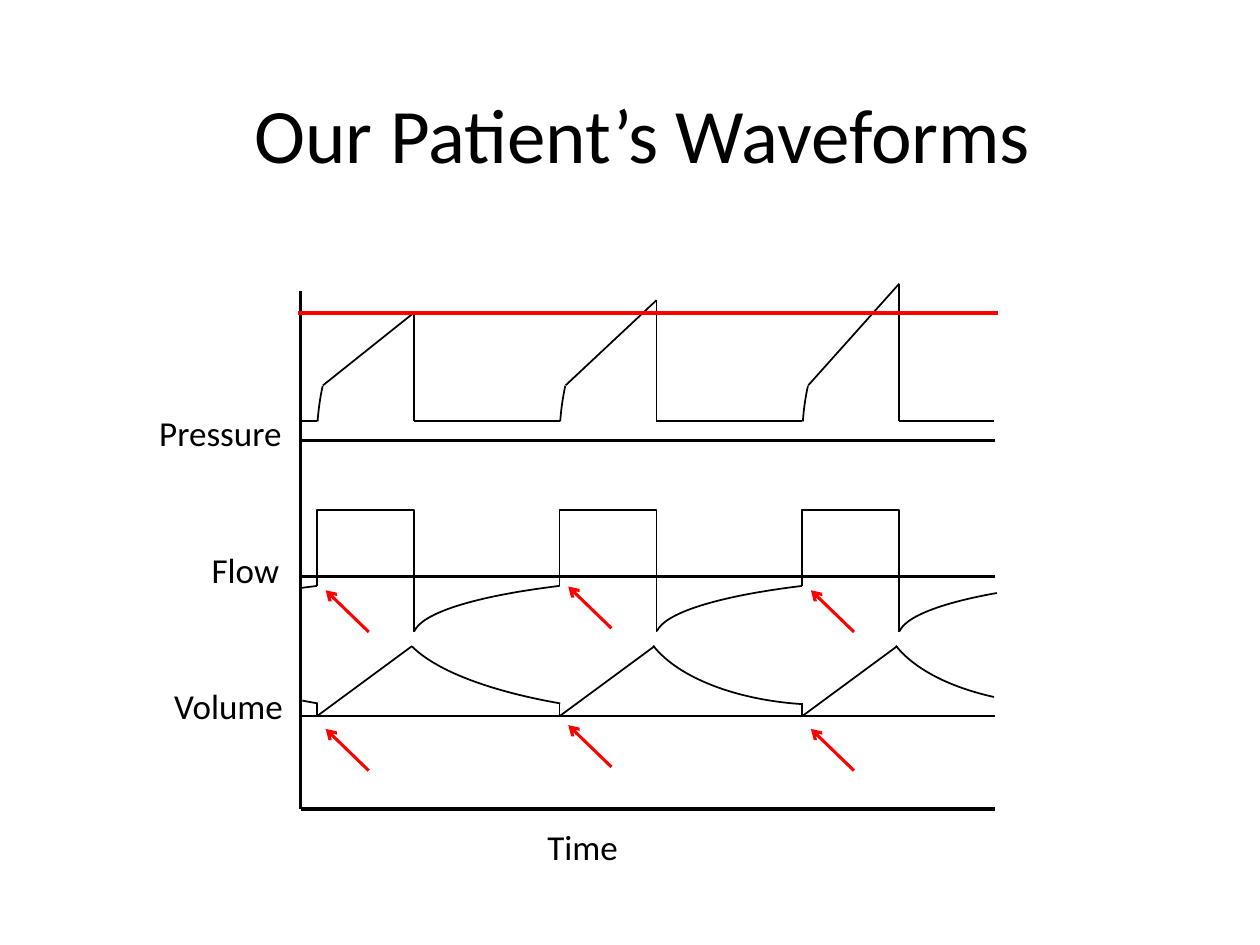
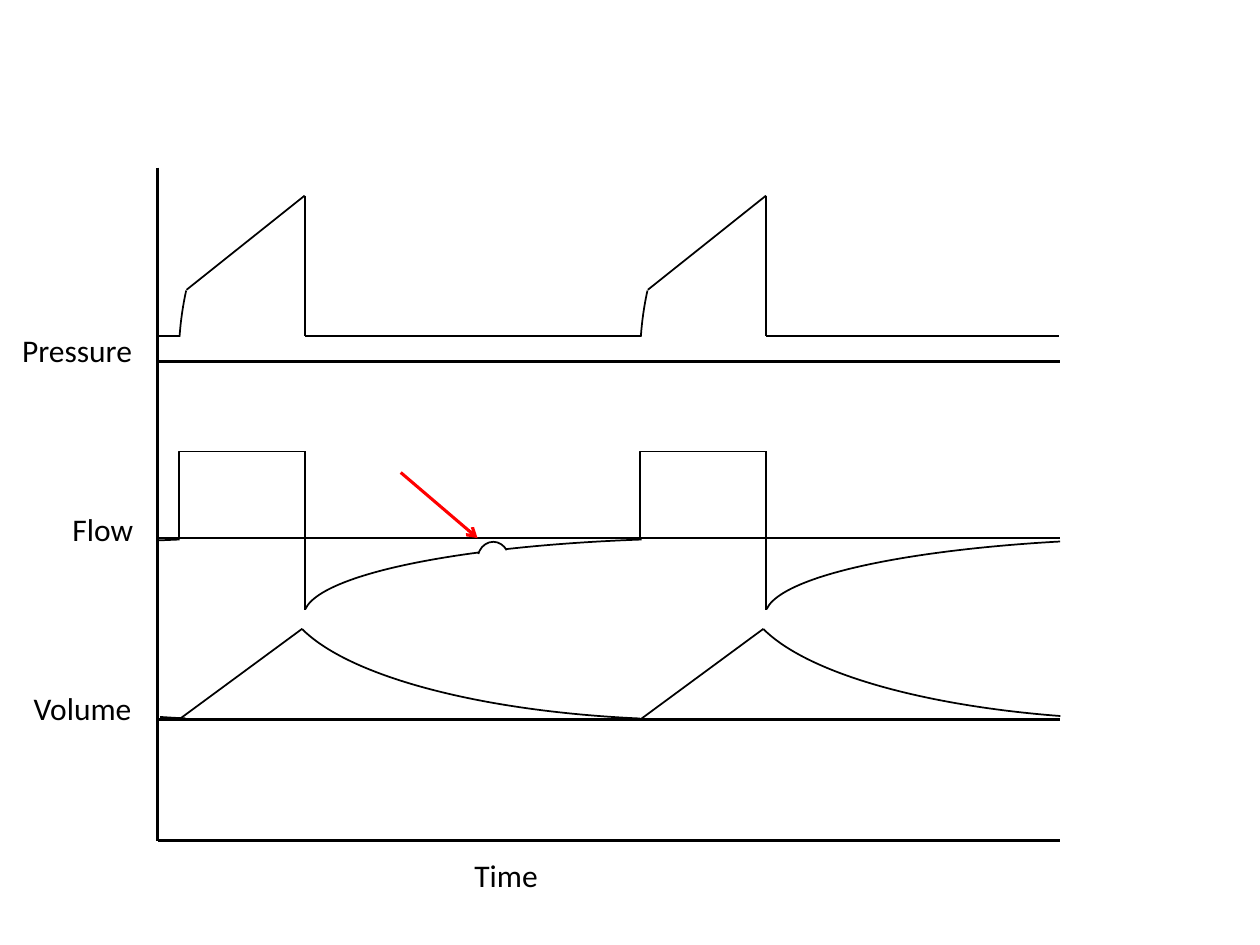
from dataclasses import dataclass

from lxml import etree
from pptx import Presentation
from pptx.dml.color import RGBColor
from pptx.enum import shapes, text
from pptx.oxml import ns
from pptx.util import Pt


@dataclass(frozen=True)
class Theme:
    font: str = "Calibri"
    ink: RGBColor = RGBColor(0, 0, 0)
    alert: RGBColor = RGBColor(255, 0, 0)
    paper: RGBColor = RGBColor(255, 255, 255)
    title_size: float = 44
    axis_weight: float = 2
    baseline_weight: float = 1.5
    arrow_weight: float = 1.75
    trace_weight: float = 1


@dataclass(frozen=True)
class Labels:
    size: float
    top: float
    pitch: float
    gaps: tuple


@dataclass(frozen=True)
class Tail:
    breath: int
    start: float
    end: float
    width: float = 474.5
    height: float = 147
    nudge: float = 0


THEME = Theme()
PLOT_WIDTH, PLOT_HEIGHT = 516, 384.6
BASELINES = {"Pressure": 110.9, "Flow": 211.7, "Volume": 315.5}
WORD_WIDTHS = {"Pressure": 3.57, "Flow": 1.97, "Volume": 3.15, "Time": 2.06}
LABEL_INSETS = 14.4
FIRST_BREATH, INSPIRATION = 12.1, 72
RESTING_PRESSURE = 96.4


def write(slide, words, left, top, width, height, size):
    box = slide.shapes.add_textbox(Pt(left), Pt(top), Pt(width), Pt(height))
    box.text_frame.text = words
    paragraph = box.text_frame.paragraphs[0]
    font = paragraph.runs[0].font
    font.name, font.size, font.color.rgb = THEME.font, Pt(size), THEME.ink
    return box.text_frame


def add_title(slide, words, left, top, width, height):
    frame = write(slide, words, left, top, width, height, THEME.title_size)
    frame.word_wrap = True
    frame.vertical_anchor = text.MSO_ANCHOR.MIDDLE
    frame.paragraphs[0].alignment = text.PP_ALIGN.CENTER


class Plot:
    def __init__(self, slide, left, top, width, period, labels):
        self.slide = slide
        self.left, self.top = left, top
        self.scale = width / PLOT_WIDTH
        self.period = period
        self.labels = labels

    def x(self, value):
        return Pt(self.left + value * self.scale)

    def y(self, value):
        return Pt(self.top + value * self.scale)

    def breath_start(self, breath):
        return FIRST_BREATH + breath * self.period

    def line(self, x1, y1, x2, y2, weight=THEME.trace_weight, color=THEME.ink):
        stroke = self.slide.shapes.add_connector(
            shapes.MSO_CONNECTOR.STRAIGHT, self.x(x1), self.y(y1), self.x(x2), self.y(y2))
        stroke.line.width = Pt(weight)
        stroke.line.color.rgb = color
        etree.SubElement(stroke._element.spPr, ns.qn("a:effectLst"))
        return stroke

    def arrow(self, x1, y1, x2, y2):
        pointer = self.line(x1, y1, x2, y2, THEME.arrow_weight, THEME.alert)
        etree.SubElement(pointer.line._get_or_add_ln(), ns.qn("a:tailEnd"), type="arrow")

    def outline(self, kind, left, top, width, height):
        figure = self.slide.shapes.add_shape(
            kind, self.x(left), self.y(top), Pt(width * self.scale), Pt(height * self.scale))
        figure.shadow.inherit = False
        figure.fill.background()
        figure.line.color.rgb = THEME.ink
        figure.line.width = Pt(THEME.trace_weight)
        return figure

    def arc(self, left, top, width, height, start, end, rotation=0):
        curve = self.outline(shapes.MSO_SHAPE.ARC, left, top, width, height)
        curve.adjustments[0], curve.adjustments[1] = start * 0.6, end * 0.6
        curve.rotation = rotation
        return curve

    def label_width(self, name):
        return WORD_WIDTHS[name] * self.labels.size + LABEL_INSETS

    def label(self, name, left, top):
        size = self.labels.size
        frame = write(self.slide, name, left, top, self.label_width(name), size * 1.6, size)
        frame.word_wrap = False
        frame.auto_size = text.MSO_AUTO_SIZE.SHAPE_TO_FIT_TEXT

    def axes(self):
        self.line(0, 0, 0, PLOT_HEIGHT, THEME.axis_weight)
        self.line(0, PLOT_HEIGHT, PLOT_WIDTH, PLOT_HEIGHT, THEME.axis_weight)
        for row, (name, level) in enumerate(BASELINES.items()):
            self.line(0, level, PLOT_WIDTH, level, THEME.baseline_weight)
            self.label(name, self.left - self.labels.gaps[row] - self.label_width(name),
                       self.labels.top + row * self.labels.pitch)
        self.label("Time", self.left + 174 * self.scale,
                   self.top + PLOT_HEIGHT * self.scale + 5.5)

    def pressure(self, peaks):
        rest_from = 0
        for breath, peak in enumerate(peaks):
            start = self.breath_start(breath)
            end = start + INSPIRATION
            self.line(rest_from, RESTING_PRESSURE, start, RESTING_PRESSURE)
            self.arc(start, 24.5, INSPIRATION, 174.2, 202.82, 232.57)
            self.line(start + 4.5, 69.8, end, peak)
            self.line(end, peak, end, RESTING_PRESSURE)
            rest_from = end
        self.line(rest_from, RESTING_PRESSURE, PLOT_WIDTH - 1, RESTING_PRESSURE)

    def flow(self, breaths, tails, step_to=None):
        zero, top = BASELINES["Flow"], 162.2
        for breath in range(breaths):
            start = self.breath_start(breath)
            end = start + INSPIRATION
            self.outline(shapes.MSO_SHAPE.RECTANGLE, start, top, INSPIRATION, zero - top)
            self.line(end, top, end, 252.7)
            if step_to:
                self.line(start, top, start, step_to)
        for tail in tails:
            left = self.breath_start(tail.breath) + INSPIRATION - 0.5
            self.arc(left, zero, tail.width, 88.6, tail.start, tail.end, 180)

    def volume(self, breaths, tails, step_from=None):
        zero = BASELINES["Volume"]
        for breath in range(breaths):
            start = self.breath_start(breath)
            self.line(start, zero, start + 70.6, 263.5)
            if step_from:
                self.line(start, zero, start, step_from)
        for tail in tails:
            left = self.breath_start(tail.breath) + 60 + tail.nudge
            self.arc(left, 168.5, tail.width, tail.height, tail.start, tail.end, 180)


def build_patient_slide(slide):
    add_title(slide, "Our Patient’s Waveforms", 43.2, 43.2, 648, 64.8)
    plot = Plot(slide, 171.8, 166.5, 397, 180.2,
                Labels(20, 231.8, 77.8, (2.1, 4.2, 2)))
    peaks = (15.9, 6.6, -5.6)
    plot.axes()
    plot.pressure(peaks)
    plot.flow(len(peaks), (Tail(-1, 14.34, 16.14), Tail(0, 0.89, 16.14),
                           Tail(1, 0.89, 16.14), Tail(2, 0.89, 11.02)), 219.1)
    plot.volume(len(peaks), (Tail(-1, 331.23, 334.18), Tail(0, 331.23, 354.54),
                             Tail(1, 284.65, 348.86, 276.2, 138.6),
                             Tail(2, 311.3, 348.86, 276.2, 138.6)), 306)
    plot.line(-2, peaks[0], PLOT_WIDTH + 2, peaks[0], THEME.axis_weight, THEME.alert)
    for tip in (222, 325):
        for breath, lift in enumerate((0, 2.8, 0)):
            start = plot.breath_start(breath)
            plot.arrow(start + 38.5, tip + 31 - lift, start + 6.5, tip - lift)


def build_effort_slide(slide):
    plot = Plot(slide, 90, 95.8, 516, 263.6,
                Labels(18, 185.9, 102.2, (5.8, 5.8, 6.7)))
    peaks = (16, 16)
    plot.axes()
    plot.pressure(peaks)
    plot.flow(len(peaks), (Tail(-1, 36.82, 44.26), Tail(0, 0.89, 44.56),
                           Tail(1, 0.89, 31.69)))
    plot.volume(len(peaks), (Tail(-1, 295.97, 304.69, nudge=5.5),
                             Tail(0, 294.78, 354.54), Tail(1, 308.65, 354.54)))
    effort = plot.arc(182.9, 213.8, 18, 20.2, 200.28, 325.02)
    effort.fill.solid()
    effort.fill.fore_color.rgb = THEME.paper
    plot.arrow(139, 174.2, 182.9, 211.7)


def main():
    deck = Presentation()
    deck.slide_width, deck.slide_height = Pt(720), Pt(540)
    for build in (build_patient_slide, build_effort_slide):
        build(deck.slides.add_slide(deck.slide_layouts[6]))
    deck.save("out.pptx")


if __name__ == "__main__":
    main()
